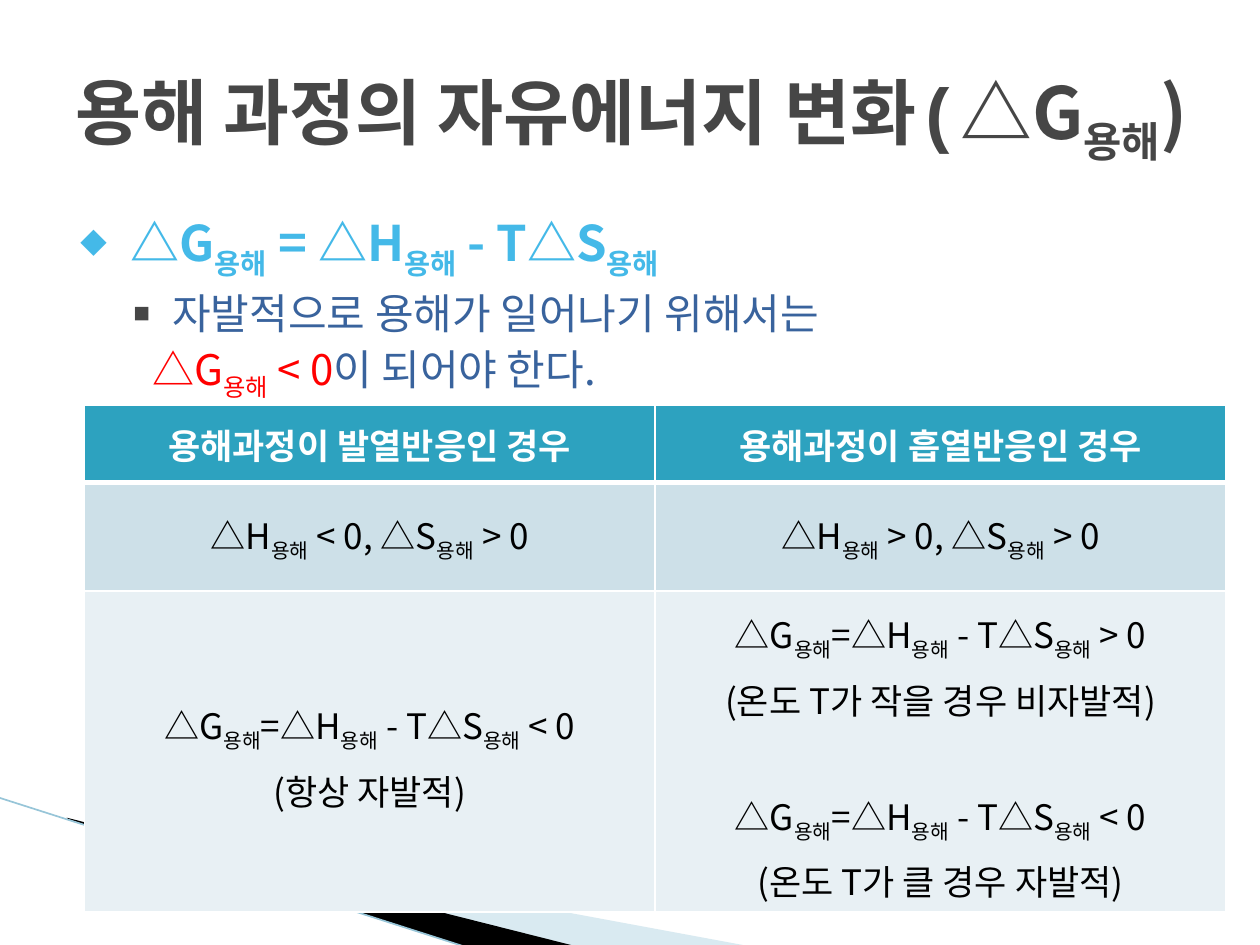
"""Build the slide on the free energy change of dissolution."""
from lxml import etree
from pptx import Presentation
from pptx.dml.color import RGBColor
from pptx.enum.shapes import MSO_CONNECTOR
from pptx.enum.text import MSO_ANCHOR, PP_ALIGN
from pptx.oxml.ns import qn
from pptx.util import Inches, Pt

MIDDLE, CENTER = MSO_ANCHOR.MIDDLE, PP_ALIGN.CENTER
STRAIGHT = MSO_CONNECTOR.STRAIGHT
SANS, MONO, SERIF = "Noto Sans CJK KR", "Courier New", "Times New Roman"
C = {
    "title": "464646", "accent": "44B9E8", "body": "39639D", "red": "FF0000",
    "white": "FFFFFF", "black": "000000", "header": "2DA2BF", "row1": "CDE0E8",
    "row2": "E8F0F4", "swoosh": "A0CBDC", "line": "97C5D8",
}


def rgb(name):
    return RGBColor.from_string(C[name])


def write(p, text, size, color, bold=False, font=SANS):
    for i, part in enumerate(text.split("_")):
        if not part:
            continue
        r = p.add_run()
        r.text = part
        for key, value in {"size": Pt(size), "bold": bold, "name": font}.items():
            setattr(r.font, key, value)
        r.font.color.rgb = rgb(color)
        rPr = r.font._element
        etree.SubElement(rPr, qn("a:ea")).set("typeface", SANS)
        if i % 2:
            rPr.set("baseline", "-25000")


prs = Presentation()
prs.slide_width, prs.slide_height = Inches(10), Inches(7.5)
s = prs.slides.add_slide(prs.slide_layouts[6])

swooshes = [
    ("swoosh", 40, [(0.55, 6.51), (5.95, 7.51), (4.56, 7.51), (0.55, 6.5)]),
    ("black", 100, [(0.53, 6.49), (4.57, 7.51), (3.72, 7.52), (0.54, 6.5)]),
]
for color, opacity, points in swooshes:
    points = [(Inches(x), Inches(y)) for x, y in points]
    fb = s.shapes.build_freeform(*points[0])
    fb.add_line_segments(points[1:])
    sp = fb.convert_to_shape()
    sp.shadow.inherit = False
    sp.fill.solid()
    sp.fill.fore_color.rgb = rgb(color)
    sp.line.fill.background()
    if opacity < 100:
        clr = sp._element.spPr.find(".//" + qn("a:srgbClr"))
        etree.SubElement(clr, qn("a:alpha")).set("val", str(opacity * 1000))

line = s.shapes.add_connector(STRAIGHT, Inches(-0.01), Inches(6.33), Inches(3.71), Inches(7.52))
line.line.color.rgb = rgb("line")
line.line.width = Pt(0.95)
etree.SubElement(line._element.spPr, qn("a:effectLst"))

tf = s.shapes.add_textbox(Inches(0.5), Inches(0.3), Inches(9.72), Inches(1.25)).text_frame
tf.word_wrap = True
tf.vertical_anchor = MIDDLE
p = tf.paragraphs[0]
write(p, "용해 과정의 자유에너지 변화(", 41, "title", True, MONO)
write(p, "△G_용해_)", 41, "title", True)

body = [
    (0.48, -0.4, 0, ("◆", "accent", 55), 28, True, [("△G_용해_ = △H_용해_ - T△S_용해_", "accent")]),
    (0.81, -0.31, 9.5, ("■", "title", 40), 24, False, [("자발적으로 용해가 일어나기 위해서는", "body")]),
    (0.65, 0, 3, None, 24, False, [("△G_용해_ < 0", "red"), ("이 되어야 한다.", "body")]),
]
tf = s.shapes.add_textbox(Inches(0.46), Inches(1.64), Inches(9.82), Inches(1.17)).text_frame
tf.word_wrap = True
for i, (left, indent, before, bullet, size, bold, parts) in enumerate(body):
    p = tf.add_paragraph() if i else tf.paragraphs[0]
    p.line_spacing = 0.93
    p.space_before = Pt(before)
    pPr = p._p.get_or_add_pPr()
    pPr.set("marL", str(Inches(left)))
    pPr.set("indent", str(Inches(indent)))
    if bullet:
        char, color, scale = bullet
        clr = etree.SubElement(pPr, qn("a:buClr"))
        etree.SubElement(clr, qn("a:srgbClr")).set("val", C[color])
        etree.SubElement(pPr, qn("a:buSzPct")).set("val", str(scale * 1000))
        etree.SubElement(pPr, qn("a:buFont")).set("typeface", SANS)
        etree.SubElement(pPr, qn("a:buChar")).set("char", char)
    for text, color in parts:
        write(p, text, size, color, bold)

energy = "△G_용해_=△H_용해_ - T△S_용해_"
rows = [
    (0.61, "header", [["용해과정이 발열반응인 경우"], ["용해과정이 흡열반응인 경우"]]),
    (0.86, "row1", [["△H_용해_ < 0, △S_용해_ > 0"], ["△H_용해_ > 0, △S_용해_ > 0"]]),
    (2.55, "row2", [
        [energy + " < 0", "(항상 자발적)"],
        [energy + " > 0", "(온도 T가 작을 경우 비자발적)", energy + " < 0", "(온도 T가 클 경우 자발적)"],
    ]),
]
table_height = sum(row[0] for row in rows)
table = s.shapes.add_table(3, 2, Inches(0.67), Inches(3.22), Inches(9.06), Inches(table_height)).table
for col in table.columns:
    col.width = Inches(4.53)
for i, (height, fill, texts) in enumerate(rows):
    table.rows[i].height = Inches(height)
    header = i == 0
    for j, lines in enumerate(texts):
        cell = table.cell(i, j)
        cell.vertical_anchor = MIDDLE
        for k, text in enumerate(lines):
            p = cell.text_frame.add_paragraph() if k else cell.text_frame.paragraphs[0]
            p.alignment = CENTER
            if fill == "row2":
                p.line_spacing = 1.2
            if k == 2:
                p.space_before = Pt(31)
            write(p, text, 20, "white" if header else "black", header, SERIF if header else SANS)
        tcPr = cell._tc.get_or_add_tcPr()
        widths = {"lnL": 1, "lnR": 1, "lnT": 3 if i == 1 else 1, "lnB": 3 if header else 1}
        for side, width in widths.items():
            ln = etree.SubElement(tcPr, qn("a:" + side))
            ln.set("w", str(Pt(width)))
            solid = etree.SubElement(ln, qn("a:solidFill"))
            etree.SubElement(solid, qn("a:srgbClr")).set("val", C["white"])
        cell.fill.solid()
        cell.fill.fore_color.rgb = rgb(fill)

prs.save("out.pptx")
